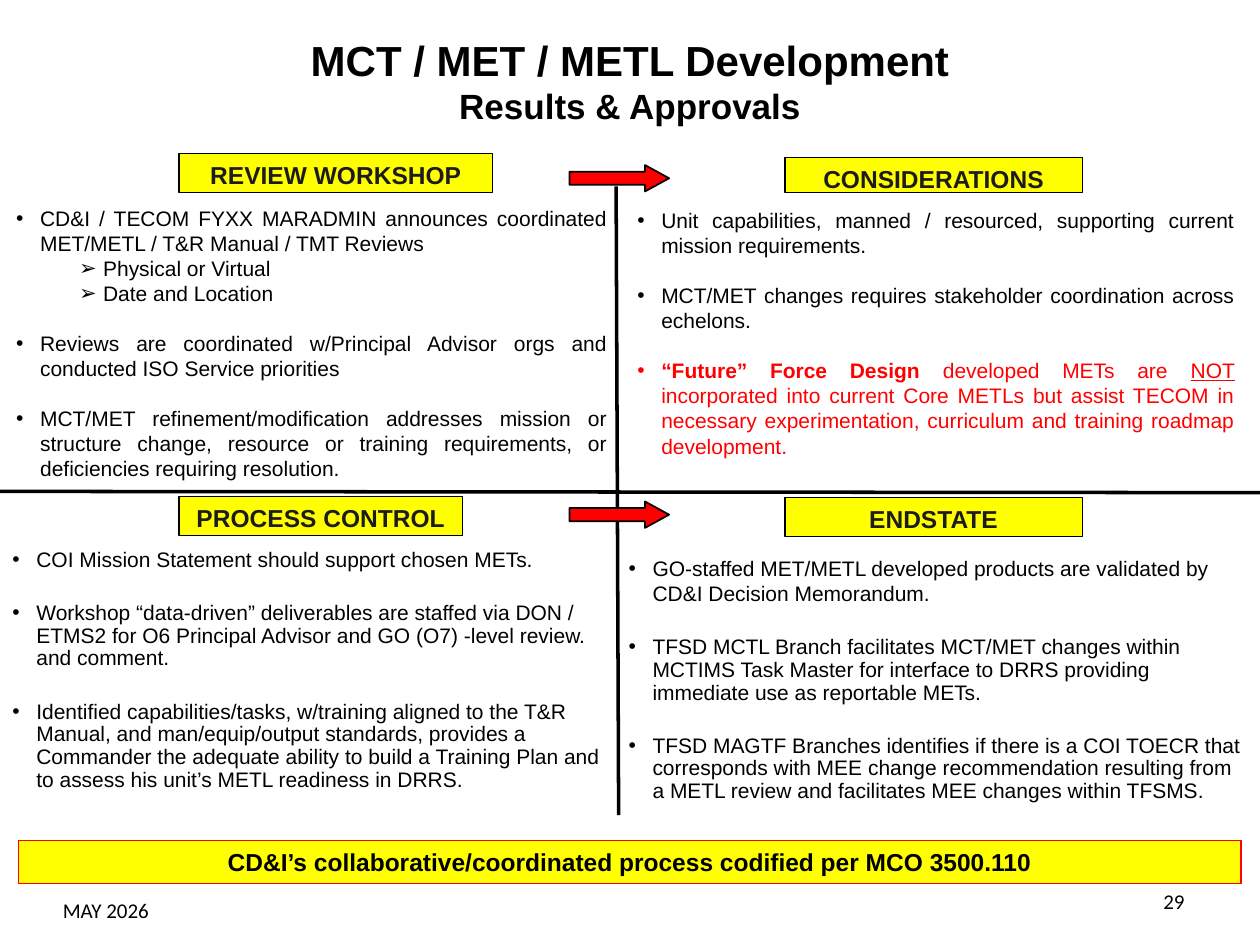
from lxml.etree import SubElement
from pptx import Presentation
from pptx.dml.color import RGBColor
from pptx.enum.shapes import MSO_CONNECTOR, MSO_SHAPE
from pptx.enum.text import MSO_ANCHOR, MSO_AUTO_SIZE, PP_ALIGN
from pptx.oxml.ns import qn
from pptx.util import Inches, Pt

BLACK = RGBColor(0x00, 0x00, 0x00)
CHARCOAL = RGBColor(0x1C, 0x1C, 0x1C)
RED = RGBColor(0xFF, 0x00, 0x00)
YELLOW = RGBColor(0xFF, 0xFF, 0x00)

TITLE = [("MCT / MET / METL Development", 24), ("Results & Approvals", 20)]
BANNER = "CD&I’s collaborative/coordinated process codified per MCO 3500.110"
MAIN, SUB = ("•", 0.19, 0), ("➢", 0.69, 1)
PLAIN, STRONG, UNDERLINED = "plain", "strong", "underlined"

PANELS = [
    {
        "heading": "REVIEW WORKSHOP", "label": (1.42, 1.22, 2.49, 0.31),
        "body": (0.03, 1.58, 4.89, 2.0), "align": PP_ALIGN.JUSTIFY, "gap": 14, "tight_from": 9,
        "items": [
            (MAIN, "CD&I / TECOM FYXX MARADMIN announces coordinated MET/METL / T&R Manual / TMT Reviews"),
            (SUB, "Physical or Virtual"),
            (SUB, "Date and Location"),
            (MAIN, "Reviews are coordinated w/Principal Advisor orgs and conducted ISO Service priorities"),
            (MAIN, "MCT/MET refinement/modification addresses mission or structure change, resource or "
                   "training requirements, or deficiencies requiring resolution."),
        ],
    },
    {
        "heading": "CONSIDERATIONS", "label": (6.23, 1.25, 2.36, 0.28),
        "body": (4.96, 1.6, 4.94, 2.42), "align": PP_ALIGN.JUSTIFY, "gap": 14, "tight_from": 9,
        "items": [
            (MAIN, "Unit capabilities, manned / resourced, supporting current mission requirements."),
            (MAIN, "MCT/MET changes requires stakeholder coordination across echelons."),
            (MAIN, [
                ("“Future” Force Design ", STRONG),
                ("developed METs are ", PLAIN),
                ("NOT", UNDERLINED),
                (" incorporated into current Core METLs but assist TECOM in necessary "
                 "experimentation, curriculum and training roadmap development.", PLAIN),
            ]),
        ],
    },
    {
        "heading": "PROCESS CONTROL", "label": (1.42, 3.94, 2.25, 0.31),
        "body": (0, 4.31, 4.92, 2.54), "align": PP_ALIGN.LEFT, "gap": 17.5, "tight_from": 0,
        "items": [
            (MAIN, "COI Mission Statement should support chosen METs."),
            (MAIN, "Workshop “data-driven” deliverables are staffed via DON / ETMS2 for O6 Principal "
                   "Advisor and GO (O7) -level review. and comment."),
            (MAIN, "Identified capabilities/tasks, w/training aligned to the T&R Manual, and "
                   "man/equip/output standards, provides a Commander the adequate ability to build a "
                   "Training Plan and to assess his unit’s METL readiness in DRRS."),
        ],
    },
    {
        "heading": "ENDSTATE", "label": (6.23, 3.95, 2.36, 0.31),
        "body": (4.89, 4.36, 5.09, 2.29), "align": PP_ALIGN.LEFT, "gap": 17.5, "tight_from": 1,
        "items": [
            (MAIN, "GO-staffed MET/METL developed products are validated by CD&I Decision Memorandum."),
            (MAIN, "TFSD MCTL Branch facilitates MCT/MET changes within MCTIMS Task Master for "
                   "interface to DRRS providing immediate use as reportable METs."),
            (MAIN, "TFSD MAGTF Branches identifies if there is a COI TOECR that corresponds with MEE "
                   "change recommendation resulting from a METL review and facilitates MEE changes "
                   "within TFSMS."),
        ],
    },
]
DIVIDERS = [(4.89, 1.48, 4.91, 6.47), (0, 3.9, 10, 3.91)]
ARROWS = [(4.52, 1.31, 0.79, 0.21), (4.52, 3.98, 0.79, 0.21)]
FOOTERS = [
    ("MAY 2026", (0.03, 7.02, 1.62, 0.4), PP_ALIGN.CENTER),
    ("29", (7.17, 6.95, 2.33, 0.4), PP_ALIGN.RIGHT),
]


def inches(values):
    return [Inches(value) for value in values]


def style(font, size, color=BLACK, bold=False, name="Arial"):
    font.name, font.size, font.bold = name, Pt(size), bold
    font.color.rgb = color


def add_box(page, area):
    box = page.shapes.add_textbox(*inches(area))
    box.text_frame.word_wrap = True
    return box.text_frame


def add_block(page, preset, area, fill, line, weight):
    block = page.shapes.add_shape(preset, *inches(area))
    block.shadow.inherit = False
    block.fill.solid()
    block.fill.fore_color.rgb = fill
    block.line.color.rgb = line
    block.line.width = Pt(weight)
    return block


def add_label(page, text, area, line, color):
    frame = add_block(page, MSO_SHAPE.RECTANGLE, area, YELLOW, line, 0.75).text_frame
    frame.word_wrap = True
    frame.vertical_anchor = MSO_ANCHOR.TOP
    frame.text = text
    para = frame.paragraphs[0]
    para.alignment = PP_ALIGN.CENTER
    style(para.runs[0].font, 14, color, True)


def add_bullet(para, marker, indent):
    properties = para._p.get_or_add_pPr()
    properties.set("marL", str(Inches(indent)))
    properties.set("indent", str(-Inches(0.19)))
    SubElement(properties, qn("a:buFont"), typeface="Arial")
    SubElement(properties, qn("a:buChar"), char=marker)


def add_body(page, panel):
    frame = add_box(page, panel["body"])
    for index, ((marker, indent, level), content) in enumerate(panel["items"]):
        para = frame.add_paragraph() if index else frame.paragraphs[0]
        add_bullet(para, marker, indent)
        para.level = level
        para.alignment = panel["align"]
        para.line_spacing = 0.9 if index >= panel["tight_from"] else 1.0
        para.space_before = Pt(panel["gap"] if index and level == 0 else 0)
        color = BLACK if isinstance(content, str) else RED
        spans = [(content, PLAIN)] if isinstance(content, str) else content
        for text, look in spans:
            span = para.add_run()
            span.text = text
            style(span.font, 12, color, look == STRONG)
            span.font.underline = look == UNDERLINED


def add_title(page):
    title = page.shapes.title
    title.left, title.top, title.width, title.height = inches((0, 0.22, 10, 0.84))
    frame = title.text_frame
    frame.text = "\n".join(text for text, size in TITLE)
    frame.auto_size = MSO_AUTO_SIZE.NONE
    frame.vertical_anchor = MSO_ANCHOR.TOP
    for para, (text, size) in zip(frame.paragraphs, TITLE):
        para.alignment = PP_ALIGN.CENTER
        style(para.runs[0].font, size, bold=True)


def add_divider(page, ends):
    divider = page.shapes.add_connector(MSO_CONNECTOR.STRAIGHT, *inches(ends))
    divider.line.color.rgb = BLACK
    divider.line.width = Pt(2)
    SubElement(divider._element.spPr, qn("a:effectLst"))


def main():
    deck = Presentation()
    deck.slide_width, deck.slide_height = inches((10, 7.5))
    page = deck.slides.add_slide(deck.slide_layouts[5])
    add_title(page)
    for panel in PANELS:
        add_body(page, panel)
    add_label(page, BANNER, (0.15, 6.67, 9.7, 0.34), RED, BLACK)
    for ends in DIVIDERS:
        add_divider(page, ends)
    for panel in PANELS:
        add_label(page, panel["heading"], panel["label"], BLACK, CHARCOAL)
    for area in ARROWS:
        arrow = add_block(page, MSO_SHAPE.RIGHT_ARROW, area, RED, BLACK, 1)
        arrow.adjustments[1] = 0.91
    for text, area, align in FOOTERS:
        frame = add_box(page, area)
        frame.vertical_anchor = MSO_ANCHOR.MIDDLE
        frame.text = text
        para = frame.paragraphs[0]
        para.alignment = align
        style(para.runs[0].font, 12, name="Calibri")
    deck.save("out.pptx")


if __name__ == "__main__":
    main()
